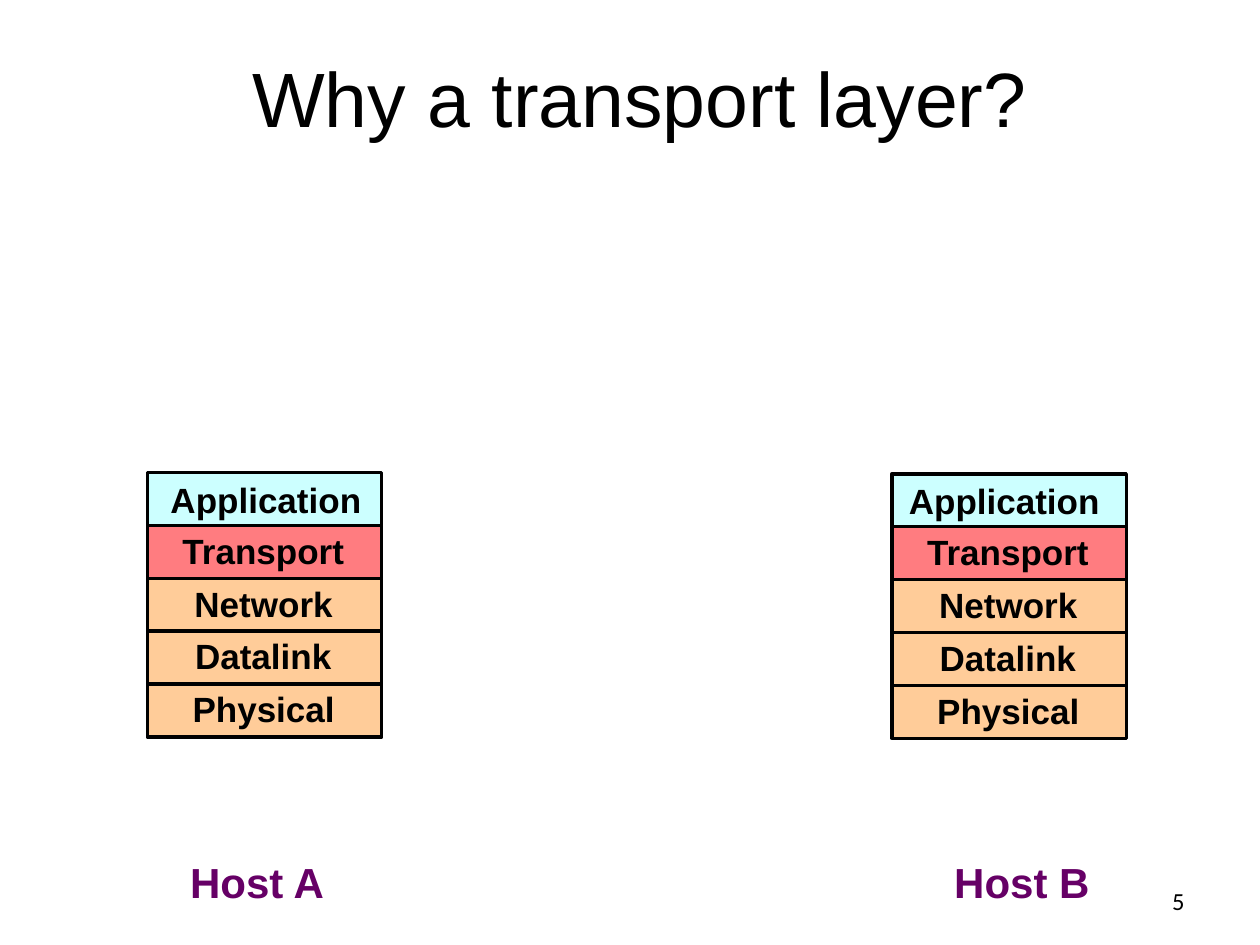
"""Build the slide that compares the protocol stacks of two hosts."""
from dataclasses import dataclass

from pptx import Presentation
from pptx.dml.color import RGBColor
from pptx.enum.shapes import MSO_SHAPE
from pptx.enum.text import MSO_ANCHOR, MSO_AUTO_SIZE, PP_ALIGN
from pptx.util import Inches, Pt

RECTANGLE = MSO_SHAPE.RECTANGLE
TOP, MIDDLE = MSO_ANCHOR.TOP, MSO_ANCHOR.MIDDLE
LEFT, CENTER, RIGHT = PP_ALIGN.LEFT, PP_ALIGN.CENTER, PP_ALIGN.RIGHT
FIT_SHAPE, NO_FIT = MSO_AUTO_SIZE.SHAPE_TO_FIT_TEXT, MSO_AUTO_SIZE.NONE

PAGE_WIDTH, PAGE_HEIGHT = 10, 7.5
COLUMN_WIDTH, ROW_HEIGHT = 1.86, 0.42
LABEL_HEIGHT, NAME_HEIGHT = 0.44, 0.5
NAME_TOP = 0.9 * PAGE_HEIGHT
COLORS = {
    "text": "000000",
    "line": "000000",
    "host": "660066",
    "application": "CCFFFF",
    "transport": "FF7C80",
    "lower": "FFCC99",
}


@dataclass(frozen=True)
class Layer:
    name: str
    color: str
    label_width: float
    label_rise: float = 0.02


@dataclass(frozen=True)
class Host:
    name: str
    left: float
    top: float
    name_center: float
    application_shift: float


LAYERS = [
    Layer("Application", "application", 1.73, 0),
    Layer("Transport", "transport", 1.5),
    Layer("Network", "lower", 1.31),
    Layer("Datalink", "lower", 1.3),
    Layer("Physical", "lower", 1.34),
]
HOSTS = [
    Host("Host A", 1.17, 3.75, 2.04, 0.02),
    Host("Host B", 7.08, 3.76, 8.11, -0.03),
]


def color_of(name: str) -> RGBColor:
    return RGBColor.from_string(COLORS[name])


def add_text(page, text: str, left: float, top: float, width: float, height: float, *,
             size: float, font: str = "Arial", color: str = "text", bold: bool = False,
             align=LEFT, anchor=TOP, wrap: bool = False) -> None:
    box = page.shapes.add_textbox(Inches(left), Inches(top), Inches(width), Inches(height))
    frame = box.text_frame
    frame.word_wrap = wrap
    frame.auto_size = NO_FIT if wrap else FIT_SHAPE
    frame.vertical_anchor = anchor
    para = frame.paragraphs[0]
    para.alignment = align
    span = para.add_run()
    span.text = text
    span.font.name = font
    span.font.size = Pt(size)
    span.font.bold = bold
    span.font.color.rgb = color_of(color)


def add_layer(page, host: Host, row: int, layer: Layer) -> None:
    top = host.top + row * ROW_HEIGHT
    box = page.shapes.add_shape(RECTANGLE, Inches(host.left), Inches(top),
                                Inches(COLUMN_WIDTH), Inches(ROW_HEIGHT))
    box.shadow.inherit = False
    box.fill.solid()
    box.fill.fore_color.rgb = color_of(layer.color)
    box.line.color.rgb = color_of("line")
    box.line.width = Pt(2)
    shift = host.application_shift if row == 0 else 0
    label_left = host.left + (COLUMN_WIDTH - layer.label_width) / 2 + shift
    add_text(page, layer.name, label_left, top - layer.label_rise,
             layer.label_width, LABEL_HEIGHT, size=20, bold=True)


def add_host(page, host: Host) -> None:
    for row, layer in [*enumerate(LAYERS)][1:] + [(0, LAYERS[0])]:
        add_layer(page, host, row, layer)
    name_width = 1.28
    add_text(page, host.name, host.name_center - name_width / 2, NAME_TOP,
             name_width, NAME_HEIGHT, size=24, color="host", bold=True, align=CENTER)


def main() -> None:
    deck = Presentation()
    deck.slide_width, deck.slide_height = Inches(PAGE_WIDTH), Inches(PAGE_HEIGHT)
    page = deck.slides.add_slide(deck.slide_layouts[6])
    add_text(page, "Why a transport layer? ", 0.05 * PAGE_WIDTH, 0.13, 9.33, 1.28,
             size=44, align=CENTER, anchor=MIDDLE, wrap=True)
    for host in HOSTS:
        add_host(page, host)
    add_text(page, "5", 7.17, 6.95, 2.33, 0.4, size=14, font="Calibri",
             align=RIGHT, anchor=MIDDLE, wrap=True)
    deck.save("out.pptx")


if __name__ == "__main__":
    main()
